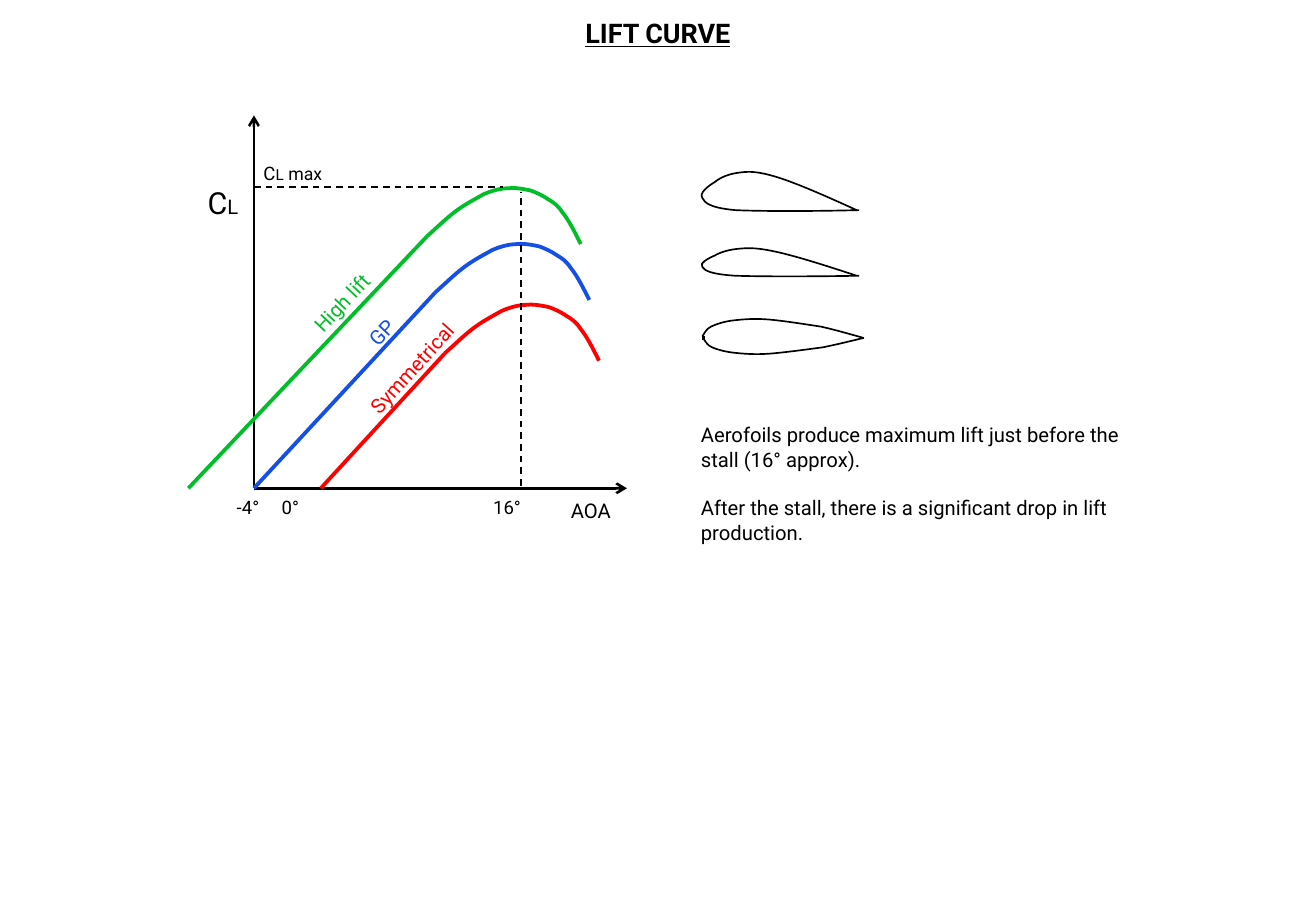
import pptx
import pptx.util
import pptx.dml.color
import pptx.enum.dml
import pptx.enum.shapes
import pptx.enum.text
import pptx.oxml
import pptx.oxml.ns

Inches, Pt = pptx.util.Inches, pptx.util.Pt

SLIDE_W, SLIDE_H = 10.83, 7.5
FONT = "Roboto"
COLOURS = {"black": "000000", "high": "00BE28", "gp": "1450E6", "sym": "FF0000"}
NAMESPACE = pptx.oxml.ns.nsdecls("a")

TITLE = "LIFT CURVE"
NOTES = [
    "Aerofoils produce maximum lift just before the stall (16° approx).",
    "After the stall, there is a significant drop in lift production.",
]
ORIGIN = (2.09, 4.02)
AXIS_LENGTH = 3.07
STALL_X, CL_MAX_Y = 4.29, 1.54
TICKS = ["-4°", "0°", "16°"]
TICK_STOPS = [0.37, 2.11]

# colour, foot of the straight part, start of the crest
LIFT_CURVES = [
    ("gp", (2.09, 4.02), (3.58, 2.41)),
    ("high", (1.55, 4.02), (3.51, 1.95)),
    ("sym", (2.64, 4.02), (3.66, 2.91)),
]
# Cubic outlines: a start, then two handles and an end for each piece
CREST = [
    (0, 0), (0.08, -0.07), (0.16, -0.15), (0.24, -0.21),
    (0.32, -0.27), (0.4, -0.31), (0.47, -0.35),
    (0.54, -0.38), (0.61, -0.4), (0.68, -0.4),
    (0.74, -0.41), (0.86, -0.38), (0.86, -0.38),
    (0.89, -0.37), (0.96, -0.34), (1, -0.31),
    (1.05, -0.28), (1.08, -0.26), (1.12, -0.2),
    (1.17, -0.14), (1.22, -0.04), (1.27, 0.06),
]
CAMBERED = [
    (1.3, 0), (0.9, 0.01), (0.5, 0.01), (0.28, 0),
    (0.07, -0.02), (0.03, -0.06), (0.01, -0.1),
    (-0.02, -0.14), (0.06, -0.2), (0.11, -0.23),
    (0.16, -0.27), (0.23, -0.3), (0.32, -0.31),
    (0.4, -0.32), (0.47, -0.32), (0.63, -0.27),
    (0.79, -0.22), (1.04, -0.11), (1.28, 0),
]
HALF_SYMMETRICAL = [
    (0, 0), (0.02, -0.03), (0.03, -0.06), (0.07, -0.08),
    (0.11, -0.1), (0.17, -0.12), (0.24, -0.13),
    (0.32, -0.14), (0.42, -0.15), (0.54, -0.14),
    (0.66, -0.13), (0.85, -0.1), (0.98, -0.08),
    (1.11, -0.05), (1.21, -0.02), (1.32, 0.01),
]
# outline, place of its start point, vertical scale
AEROFOILS = [
    (CAMBERED, (5.77, 2.27), 0.72),
    (CAMBERED, (5.77, 1.73), 1),
    (HALF_SYMMETRICAL, (5.78, 2.77), 1),
    (HALF_SYMMETRICAL, (5.79, 2.79), -0.87),
]
NOSE = ((5.79, 2.8), (5.79, 2.77))

# box, rotation, colour, runs of (text, size)
LABELS = [
    ((4.6, 4.05, 1.26, 0.3), 0, "black", [("AOA", 12)]),
    ((2.38, 2.24, 1.05, 0.3), 313.2, "high", [("High lift", 12)]),
    ((2.91, 2.54, 0.55, 0.3), 313.4, "gp", [("GP", 12)]),
    ((2.71, 2.62, 1.83, 0.3), 312.2, "sym", [("Symmetrical", 12)]),
    ((1.61, 1.47, 0.63, 0.4), 0, "black", [("C", 18), ("L", 12)]),
    ((2.07, 1.28, 0.77, 0.29), 0, "black",
     [("C", 11), ("L", 9), (" ", 11), ("max", 10.5)]),
]


def rgb(colour):
    return pptx.dml.color.RGBColor.from_string(COLOURS[colour])


def add_run(paragraph, text, size, colour="black"):
    run = paragraph.add_run()
    run.text = text
    run.font.name, run.font.size = FONT, Pt(size)
    run.font.color.rgb = rgb(colour)
    return run


def add_text_frame(slide, box, rotation=0):
    label = slide.shapes.add_textbox(*map(Inches, box))
    label.rotation = rotation
    label.text_frame.word_wrap = True
    return label.text_frame


def add_line(slide, start, end, colour="black", width=1.0, dashed=False, arrow=False):
    line = slide.shapes.add_connector(
        pptx.enum.shapes.MSO_CONNECTOR.STRAIGHT, *map(Inches, (*start, *end)))
    line.line.color.rgb = rgb(colour)
    line.line.width = Pt(width)
    if dashed:
        line.line.dash_style = pptx.enum.dml.MSO_LINE.DASH
    if arrow:
        line.line._get_or_add_ln().append(
            pptx.oxml.parse_xml(f'<a:tailEnd {NAMESPACE} type="arrow"/>'))
    line._element.spPr.append(pptx.oxml.parse_xml(f"<a:effectLst {NAMESPACE}/>"))


def add_curve(slide, outline, start, scale=1, colour="black", width=1.0):
    """Draw a freeform through the end points, then bend each piece by its handles."""
    points = [(Inches(start[0] + x), Inches(start[1] + y * scale)) for x, y in outline]
    builder = slide.shapes.build_freeform(*points[0])
    builder.add_line_segments(points[3::3], close=False)
    curve = builder.convert_to_shape()
    segments = list(curve._element.iter(pptx.oxml.ns.qn("a:lnTo")))
    for segment, *handles in zip(segments, points[1::3], points[2::3]):
        segment.tag = pptx.oxml.ns.qn("a:cubicBezTo")
        for position, (x, y) in enumerate(handles):
            segment.insert(position, pptx.oxml.parse_xml(
                f'<a:pt {NAMESPACE} x="{x - curve.left}" y="{y - curve.top}"/>'))
    curve.shadow.inherit = False
    curve.fill.background()
    curve.line.color.rgb = rgb(colour)
    curve.line.width = Pt(width)


def add_title(slide):
    title = slide.shapes.title
    title.left, title.top, title.width, title.height = map(
        Inches, (0, 0.09, SLIDE_W, 0.37))
    frame = title.text_frame
    frame.auto_size = pptx.enum.text.MSO_AUTO_SIZE.NONE
    frame.vertical_anchor = pptx.enum.text.MSO_ANCHOR.TOP
    frame.paragraphs[0].alignment = pptx.enum.text.PP_ALIGN.CENTER
    run = add_run(frame.paragraphs[0], TITLE, 16)
    run.font.bold = run.font.underline = True


def add_ticks(slide):
    paragraph = add_text_frame(slide, (1.85, 4.03, 2.83, 0.29)).paragraphs[0]
    stops = "".join(f'<a:tab pos="{Inches(stop)}" algn="l"/>' for stop in TICK_STOPS)
    paragraph._p.get_or_add_pPr().append(
        pptx.oxml.parse_xml(f"<a:tabLst {NAMESPACE}>{stops}</a:tabLst>"))
    add_run(paragraph, "\t".join(TICKS), 11)


def add_notes(slide):
    frame = add_text_frame(slide, (5.67, 3.43, 3.7, 1.11))
    for index, note in enumerate(NOTES):
        paragraph = frame.add_paragraph() if index else frame.paragraphs[0]
        paragraph.space_before = Pt(14.4 if index else 0)
        add_run(paragraph, note, 12)


def main():
    deck = pptx.Presentation()
    deck.slide_width, deck.slide_height = Inches(SLIDE_W), Inches(SLIDE_H)
    slide = deck.slides.add_slide(deck.slide_layouts[5])
    add_title(slide)

    for outline, start, scale in AEROFOILS:
        add_curve(slide, outline, start, scale)
    add_line(slide, *NOSE, width=2.25)
    add_notes(slide)

    x, y = ORIGIN
    for end in ((x, y - AXIS_LENGTH), (x + AXIS_LENGTH, y)):
        add_line(slide, ORIGIN, end, width=1.5, arrow=True)
    for colour, foot, crest in LIFT_CURVES:
        add_line(slide, foot, crest, colour, 2.25)
        add_curve(slide, CREST, crest, colour=colour, width=2.25)
    add_line(slide, (STALL_X, 4), (STALL_X, 1.58), dashed=True)
    add_line(slide, (x, CL_MAX_Y), (4.14, CL_MAX_Y), dashed=True)

    for box, rotation, colour, runs in LABELS:
        paragraph = add_text_frame(slide, box, rotation).paragraphs[0]
        for text, size in runs:
            add_run(paragraph, text, size, colour)
    add_ticks(slide)
    deck.save("out.pptx")


if __name__ == "__main__":
    main()
